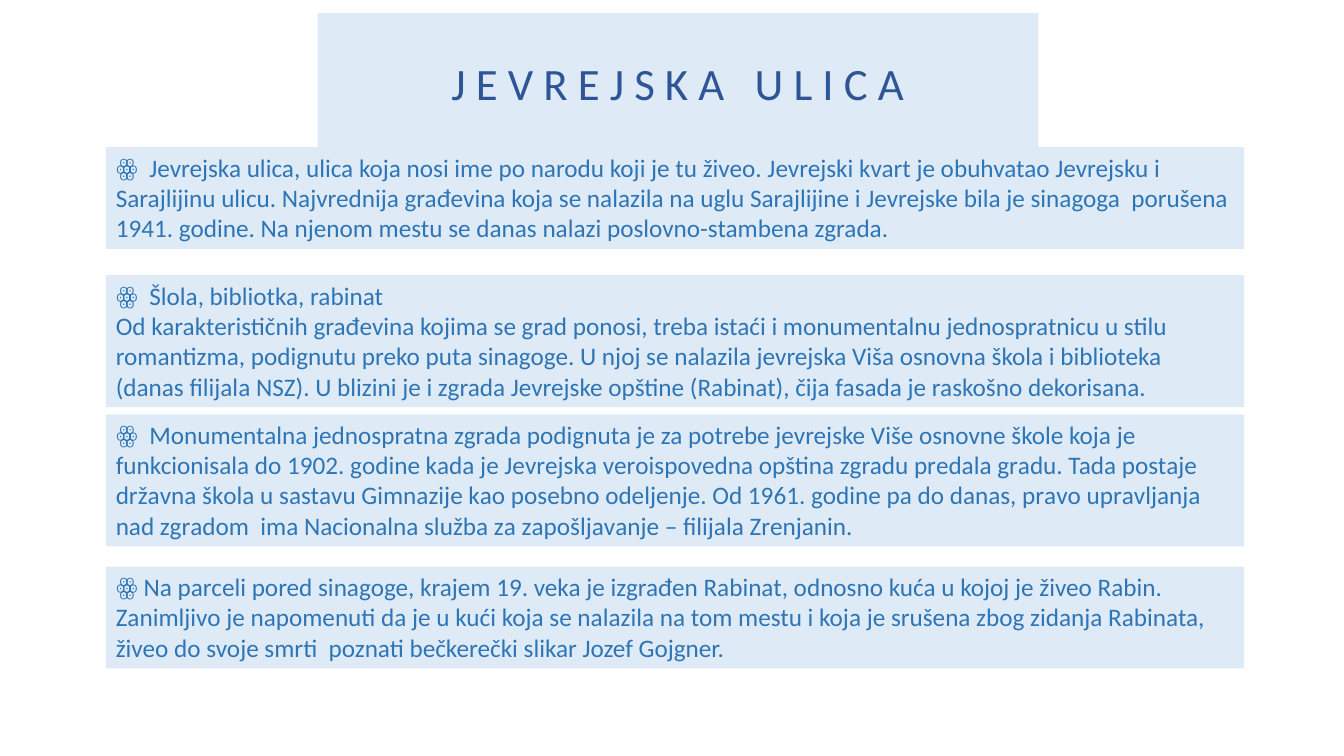
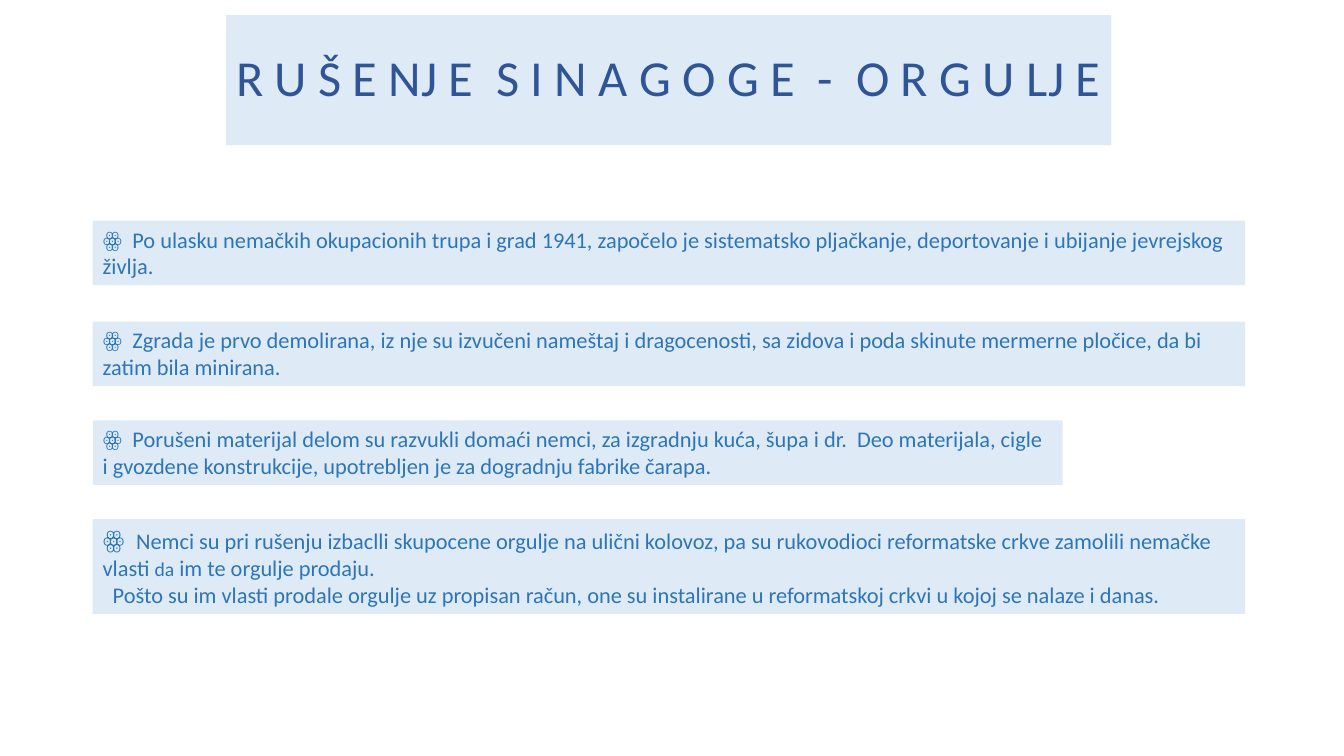
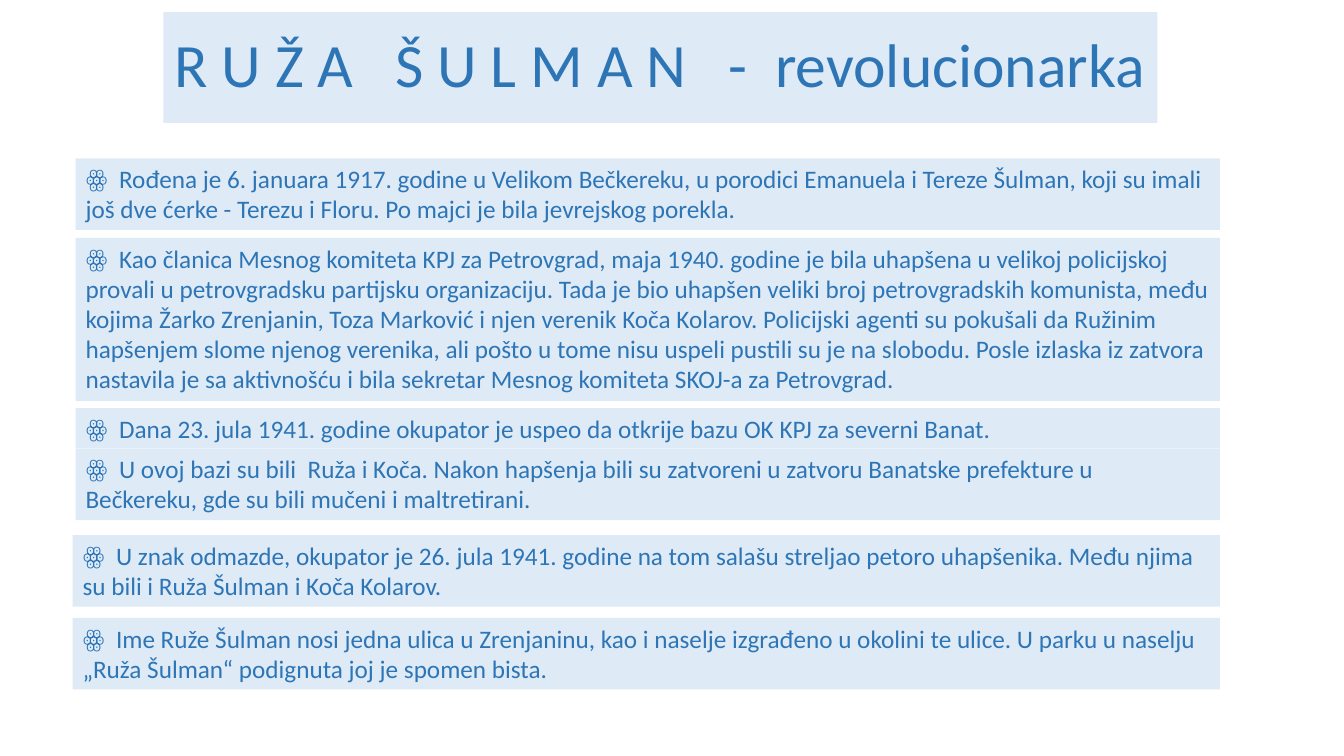
"""Build three slides about the Jewish history of Zrenjanin."""
from dataclasses import dataclass

from pptx import Presentation
from pptx.dml.color import RGBColor
from pptx.enum.text import MSO_ANCHOR, MSO_AUTO_SIZE, PP_ALIGN
from pptx.util import Inches, Pt

CENTER = PP_ALIGN.CENTER
MIDDLE = MSO_ANCHOR.MIDDLE
NO_FIT, GROW = MSO_AUTO_SIZE.NONE, MSO_AUTO_SIZE.SHAPE_TO_FIT_TEXT
TITLE_ONLY = 5
FONT = "Calibri"
PANEL_FILL, NAVY, BLUE = "DEEBF7", "2F5597", "2E75B6"


@dataclass
class Run:
    text: str
    size: float | None = None


@dataclass
class Para:
    runs: tuple[Run, ...]
    indent: float = 0


@dataclass
class Panel:
    left: float
    top: float
    width: float
    height: float
    paras: tuple[str | Para, ...]


@dataclass
class Title:
    text: str
    left: float
    top: float
    width: float
    height: float
    size: float
    color: str = NAVY


@dataclass
class Page:
    title: Title
    size: float
    panels: tuple[Panel, ...]


PAGES = (
    Page(Title("J E V R E J S K A   U L I C A", 3.15, 0.13, 7.15, 1.45, 32), 18, (
        Panel(1.05, 1.46, 11.29, 1.01, (
            "ꙮ  Jevrejska ulica, ulica koja nosi ime po narodu koji je tu živeo. Jevrejski kvart "
            "je obuhvatao Jevrejsku i Sarajlijinu ulicu. Najvrednija građevina koja se nalazila na "
            "uglu Sarajlijine i Jevrejske bila je sinagoga  porušena 1941. godine. Na njenom mestu "
            "se danas nalazi poslovno-stambena zgrada.",)),
        Panel(1.05, 2.73, 11.29, 1.31, (
            "ꙮ  Šlola, bibliotka, rabinat",
            "Od karakterističnih građevina kojima se grad ponosi, treba istaći i monumentalnu "
            "jednospratnicu u stilu romantizma, podignutu preko puta sinagoge. U njoj se nalazila "
            "jevrejska Viša osnovna škola i biblioteka (danas filijala NSZ). U blizini je i zgrada "
            "Jevrejske opštine (Rabinat), čija fasada je raskošno dekorisana.")),
        Panel(1.05, 4.11, 11.29, 1.31, (
            "ꙮ  Monumentalna jednospratna zgrada podignuta je za potrebe jevrejske Više osnovne "
            "škole koja je funkciоnisаlа dо 1902. gоdinе kаdа је Јеvrејskа vеrоispоvеdnа оpštinа "
            "zgradu prеdаlа grаdu. Tada pоstаje držаvnа škоlа u sаstаvu Gimnаziје kао pоsеbnо "
            "оdеlјеnjе. Оd 1961. gоdinе pa do danas, prаvо uprаvlјаnjа nаd zgrаdоm  imа "
            "Nаciоnаlnа službа zа zаpоšlјаvаnjе – filiјаlа Zrеnjаnin.",)),
        Panel(1.05, 5.62, 11.29, 1.01, (
            "ꙮ Na parceli pored sinagoge, krajem 19. veka je izgrađen Rabinat, odnosno kuća u "
            "kojoj je živeo Rabin. Zanimljivo je napomenuti da je u kući koja se nalazila na tom "
            "mestu i koja je srušena zbog zidanja Rabinata, živeo do svoje smrti  poznati "
            "bečkerečki slikar Jozef Gojgner.",)),
    )),
    Page(Title("R U Š E NJ E  S I N A G O G E  -  O R G U LJ E", 2.24, 0.15, 8.78, 1.29, 36), 16, (
        Panel(0.92, 2.19, 11.43, 0.64, (
            "ꙮ  Po ulasku nemačkih okupacionih trupa i grad 1941, započelo je sistematsko "
            "pljačkanje, deportovanje i ubijanje jevrejskog življa.",)),
        Panel(0.92, 3.19, 11.43, 0.64, (
            "ꙮ  Zgrada je prvo demolirana, iz nje su izvučeni nameštaj i dragocenosti, sa zidova "
            "i poda skinute mermerne pločice, da bi zatim bila minirana.",)),
        Panel(0.92, 4.17, 9.62, 0.64, (
            "ꙮ  Porušeni materijal delom su razvukli domaći nemci, za izgradnju kuća, šupa i dr.  "
            "Deo materijala, cigle",
            "i gvozdene konstrukcije, upotrebljen je za dogradnju fabrike čarapa.")),
        Panel(0.92, 5.15, 11.43, 0.94, (
            Para((
                Run("ꙮ  ", 18),
                Run("Nemci su pri rušenju izbaclli skupocene orgulje na ulični kolovoz, pa su "
                    "rukovodioci reformatske crkve zamolili nemačke vlasti "),
                Run("da", 14),
                Run(" im te orgulje prodaju."))),
            Para((Run("Pošto su im vlasti prodale orgulje uz propisan račun, one su instalirane u "
                      "reformatskoj crkvi u kojoj se nalaze i danas."),), indent=0.1))),
    )),
    Page(Title("R U Ž A   Š U L M A N   -  revolucionarka", 1.62, 0.12, 9.86, 1.1, 44, BLUE), 18, (
        Panel(0.75, 1.57, 11.35, 0.71, (
            "ꙮ  Rođena je 6. januara 1917. godine u Velikom Bečkereku, u porodici Emanuela i "
            "Tereze Šulman, koji su imali još dve ćerke - Terezu i Floru. Po majci je bila "
            "jevrejskog porekla.",)),
        Panel(0.75, 2.36, 11.35, 1.62, (
            "ꙮ  Kao članica Mesnog komiteta KPJ za Petrovgrad, maja 1940. godine je bila uhapšena "
            "u velikoj policijskoj provali u petrovgradsku partijsku organizaciju. Tada je bio "
            "uhapšen veliki broj petrovgradskih komunista, među kojima Žarko Zrenjanin, Toza "
            "Marković i njen verenik Koča Kolarov. Policijski agenti su pokušali da Ružinim "
            "hapšenjem slome njenog verenika, ali pošto u tome nisu uspeli pustili su je na "
            "slobodu. Posle izlaska iz zatvora nastavila je sa aktivnošću i bila sekretar Mesnog "
            "komiteta SKOJ-a za Petrovgrad.",)),
        Panel(0.75, 4.05, 11.35, 0.4, (
            "ꙮ  Dana 23. jula 1941. godine okupator je uspeo da otkrije bazu OK KPJ za severni "
            "Banat.",)),
        Panel(0.75, 4.45, 11.35, 0.71, (
            "ꙮ  U ovoj bazi su bili  Ruža i Koča. Nakon hapšenja bili su zatvoreni u zatvoru "
            "Banatske prefekture u Bečkereku, gde su bili mučeni i maltretirani.",)),
        Panel(0.72, 5.31, 11.38, 0.71, (
            "ꙮ  U znak odmazde, okupator je 26. jula 1941. godine na tom salašu streljao petoro "
            "uhapšenika. Među njima su bili i Ruža Šulman i Koča Kolarov.",)),
        Panel(0.72, 6.13, 11.38, 0.71, (
            "ꙮ  Ime Ruže Šulman nosi jedna ulica u Zrenjaninu, kao i naselje izgrađeno u okolini "
            "te ulice. U parku u naselju „Ruža Šulman“ podignuta joj je spomen bista.",)),
    )),
)


def rgb(color: str) -> RGBColor:
    return RGBColor.from_string(color)


def box(item: Title | Panel) -> tuple[int, ...]:
    return tuple(Inches(v) for v in (item.left, item.top, item.width, item.height))


def fill_panel(sp) -> None:
    sp.fill.solid()
    sp.fill.fore_color.rgb = rgb(PANEL_FILL)


def set_font(p, size: float, color: str) -> None:
    p.font.name, p.font.size = FONT, Pt(size)
    p.font.color.rgb = rgb(color)


def add_title(slide, title: Title) -> None:
    sp = slide.shapes.title
    sp.left, sp.top, sp.width, sp.height = box(title)
    fill_panel(sp)
    tf = sp.text_frame
    tf.text = title.text
    tf.word_wrap, tf.auto_size, tf.vertical_anchor = True, NO_FIT, MIDDLE
    p = tf.paragraphs[0]
    p.alignment, p.line_spacing = CENTER, 0.9
    set_font(p, title.size, title.color)


def add_panel(slide, panel: Panel, size: float) -> None:
    sp = slide.shapes.add_textbox(*box(panel))
    fill_panel(sp)
    tf = sp.text_frame
    tf.word_wrap, tf.auto_size = True, GROW
    for i, item in enumerate(panel.paras):
        para = Para((Run(item),)) if isinstance(item, str) else item
        p = tf.add_paragraph() if i else tf.paragraphs[0]
        if para.indent:
            p._p.get_or_add_pPr().set("marL", str(Inches(para.indent)))
        set_font(p, size, BLUE)
        for run in para.runs:
            r = p.add_run()
            r.text = run.text
            if run.size:
                r.font.size = Pt(run.size)


def main() -> None:
    prs = Presentation()
    prs.slide_width, prs.slide_height = Inches(13.33), Inches(7.5)
    for page in PAGES:
        slide = prs.slides.add_slide(prs.slide_layouts[TITLE_ONLY])
        add_title(slide, page.title)
        for panel in page.panels:
            add_panel(slide, panel, page.size)
    prs.save("out.pptx")


if __name__ == "__main__":
    main()
